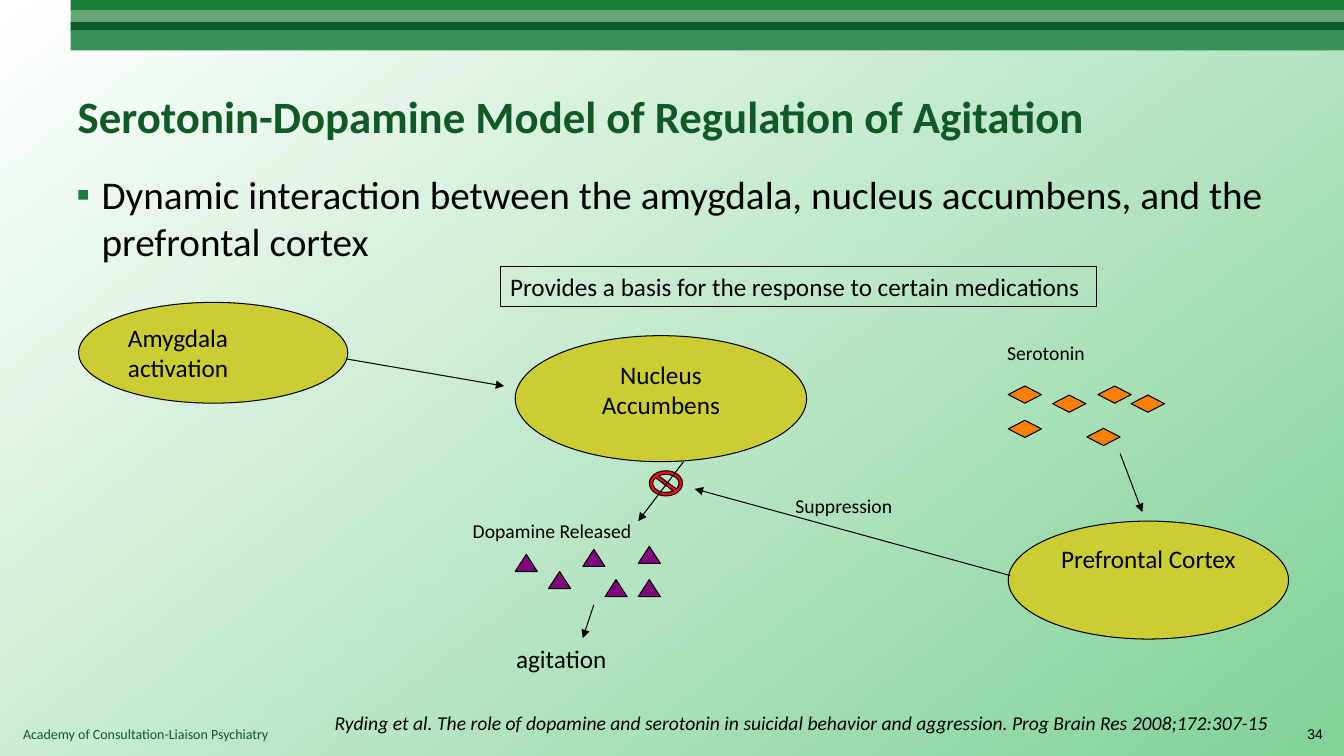
from lxml.etree import SubElement
from pptx import Presentation
from pptx.dml.color import RGBColor
from pptx.enum.shapes import MSO_CONNECTOR, MSO_SHAPE
from pptx.enum.text import MSO_ANCHOR, MSO_AUTO_SIZE, PP_ALIGN
from pptx.oxml.ns import qn
from pptx.util import Inches, Pt

BLACK = RGBColor(0x00, 0x00, 0x00)
WHITE = RGBColor(0xFF, 0xFF, 0xFF)
MINT = RGBColor(0x81, 0xD2, 0x97)
DARK_GREEN = RGBColor(0x10, 0x5A, 0x25)
GREEN = RGBColor(0x17, 0x7D, 0x38)
PALE_GREEN = RGBColor(0x66, 0xA6, 0x77)
MID_GREEN = RGBColor(0x38, 0x91, 0x55)
OLIVE = RGBColor(0xCC, 0xCC, 0x33)
ORANGE = RGBColor(0xFF, 0x80, 0x00)
PURPLE = RGBColor(0x80, 0x00, 0x80)
RED = RGBColor(0xFF, 0x00, 0x00)

TITLE = "Serotonin-Dopamine Model of Regulation of Agitation"
SUMMARY = ("Dynamic interaction between the amygdala, nucleus accumbens, "
           "and the prefrontal cortex")
BASIS = "Provides a basis for the response to certain medications"
CITATION = ("Ryding et al. The role of dopamine and serotonin in suicidal behavior "
            "and aggression. Prog Brain Res 2008;172:307-15")
SOCIETY = "Academy of Consultation-Liaison Psychiatry"
PAGE = "34"

BANDS = [(0, 0.11, GREEN), (0.1, 0.13, PALE_GREEN),
         (0.22, 0.09, DARK_GREEN), (0.3, 0.2, MID_GREEN)]
REGIONS = [
    ("Nucleus Accumbens", (5.11, 3.33, 2.89, 1.25), PP_ALIGN.CENTER),
    ("Amygdala activation", (0.78, 3, 2.67, 1), PP_ALIGN.LEFT),
    ("Prefrontal Cortex", (10, 5.17, 2.78, 1.17), PP_ALIGN.CENTER),
]
LABELS = [
    ("agitation", (5.02, 6.33, 1.11, 0.4), 18),
    ("Serotonin", (9.89, 3.33, 0.98, 0.34), 14),
    ("Suppression", (7.79, 4.85, 1.17, 0.34), 14),
    ("Dopamine Released", (4.59, 5.1, 1.79, 0.34), 14),
]
SEROTONIN = [(10, 3.83), (10.44, 3.92), (10, 4.17),
             (10.89, 3.83), (11.22, 3.92), (10.78, 4.25)]
DOPAMINE = [(6, 5.75), (5.11, 5.5), (5.44, 5.67),
            (5.78, 5.45), (6.33, 5.75), (6.33, 5.42)]
ARROWS = [
    ((5.89, 6), (5.78, 6.33)),
    ((11.11, 4.5), (11.33, 5.08)),
    ((10.02, 5.71), (6.89, 4.85)),
    ((3.43, 3.56), (5, 3.83)),
    ((6.78, 4.58), (6.33, 5.17)),
]


def write(holder, text, size=18, color=BLACK, font="Calibri", bold=False, italic=False,
          align=PP_ALIGN.LEFT, anchor=MSO_ANCHOR.TOP, wrap=True, grow=False, bullet=None):
    """Put one formatted paragraph into a shape."""
    frame = holder.text_frame
    frame.word_wrap = wrap
    frame.auto_size = MSO_AUTO_SIZE.SHAPE_TO_FIT_TEXT if grow else MSO_AUTO_SIZE.NONE
    frame.vertical_anchor = anchor
    paragraph = frame.paragraphs[0]
    paragraph.alignment = align
    if bullet:
        properties = paragraph._p.get_or_add_pPr()
        properties.set("marL", str(Inches(0.25)))
        properties.set("indent", str(Inches(-0.25)))
        bullet_color = SubElement(properties, qn("a:buClr"))
        SubElement(bullet_color, qn("a:srgbClr")).set("val", str(GREEN))
        SubElement(properties, qn("a:buFont")).set("typeface", "Arial")
        SubElement(properties, qn("a:buChar")).set("char", bullet)
    run = paragraph.add_run()
    run.text = text
    run.font.name = font
    run.font.size = Pt(size)
    run.font.bold = bold
    run.font.italic = italic
    run.font.color.rgb = color


def add_label(slide, text, place, **style):
    """Add a text box with formatted text."""
    label = slide.shapes.add_textbox(*map(Inches, place))
    write(label, text, **style)


def add_figure(slide, kind, place, fill=None, outlined=True):
    """Add a preset shape with a plain fill and a thin black outline."""
    figure = slide.shapes.add_shape(kind, *map(Inches, place))
    figure.shadow.inherit = False
    if fill is None:
        figure.fill.background()
    else:
        figure.fill.solid()
        figure.fill.fore_color.rgb = fill
    if outlined:
        figure.line.color.rgb = BLACK
        figure.line.width = Pt(0.75)
    else:
        figure.line.fill.background()
    return figure


def add_arrow(slide, start, end):
    """Add a thin black arrow from start to end."""
    arrow = slide.shapes.add_connector(MSO_CONNECTOR.STRAIGHT, *map(Inches, start + end))
    arrow.line.color.rgb = BLACK
    arrow.line.width = Pt(0.75)
    SubElement(arrow.line._get_or_add_ln(), qn("a:tailEnd")).set("type", "triangle")
    SubElement(arrow._element.spPr, qn("a:effectLst"))


def paint_background(slide):
    """Fill the background with a diagonal gradient."""
    fill = slide.background.fill
    fill.gradient()
    fill.gradient_angle = 308
    for stop, position, color in zip(fill.gradient_stops, (0, 1), (WHITE, MINT)):
        stop.position = position
        stop.color.rgb = color


def main():
    """Build the slide and save it."""
    deck = Presentation()
    deck.slide_width, deck.slide_height = Inches(13.33), Inches(7.5)
    slide = deck.slides.add_slide(deck.slide_layouts[5])
    paint_background(slide)

    for top, height, color in BANDS:
        add_figure(slide, MSO_SHAPE.RECTANGLE, (0.7, top, 12.63, height), color, outlined=False)
    add_label(slide, SOCIETY, (0.13, 7.15, 9.25, 0.27), size=10, color=DARK_GREEN, grow=True)

    title = slide.shapes.title
    title.left, title.top, title.width, title.height = map(Inches, (0.67, 0.58, 12, 1.13))
    write(title, TITLE, size=32, color=DARK_GREEN, bold=True, anchor=MSO_ANCHOR.MIDDLE)
    add_label(slide, SUMMARY, (0.66, 1.64, 12, 1.17), size=28, bullet="▪")
    add_label(slide, PAGE, (12.69, 7.08, 0.53, 0.4), size=10, font="Arial",
              align=PP_ALIGN.RIGHT, anchor=MSO_ANCHOR.MIDDLE)

    for name, place, align in REGIONS:
        write(add_figure(slide, MSO_SHAPE.OVAL, place, OLIVE), name, align=align)
    for left, top in SEROTONIN:
        add_figure(slide, MSO_SHAPE.DIAMOND, (left, top, 0.33, 0.17), ORANGE)
    for left, top in DOPAMINE:
        add_figure(slide, MSO_SHAPE.ISOSCELES_TRIANGLE, (left, top, 0.22, 0.17), PURPLE)

    block = add_figure(slide, MSO_SHAPE.NO_SYMBOL, (6.44, 4.67, 0.33, 0.25), RED)
    block.adjustments[0] = 0.14
    for start, end in ARROWS:
        add_arrow(slide, start, end)
    for text, place, size in LABELS:
        add_label(slide, text, place, size=size, wrap=False, grow=True)

    add_label(slide, CITATION, (3.22, 7, 9.74, 0.34), size=14, italic=True,
              wrap=False, grow=True)
    basis = add_figure(slide, MSO_SHAPE.RECTANGLE, (4.96, 2.64, 5.92, 0.4))
    write(basis, BASIS, wrap=False, grow=True)
    deck.save("out.pptx")


if __name__ == "__main__":
    main()
